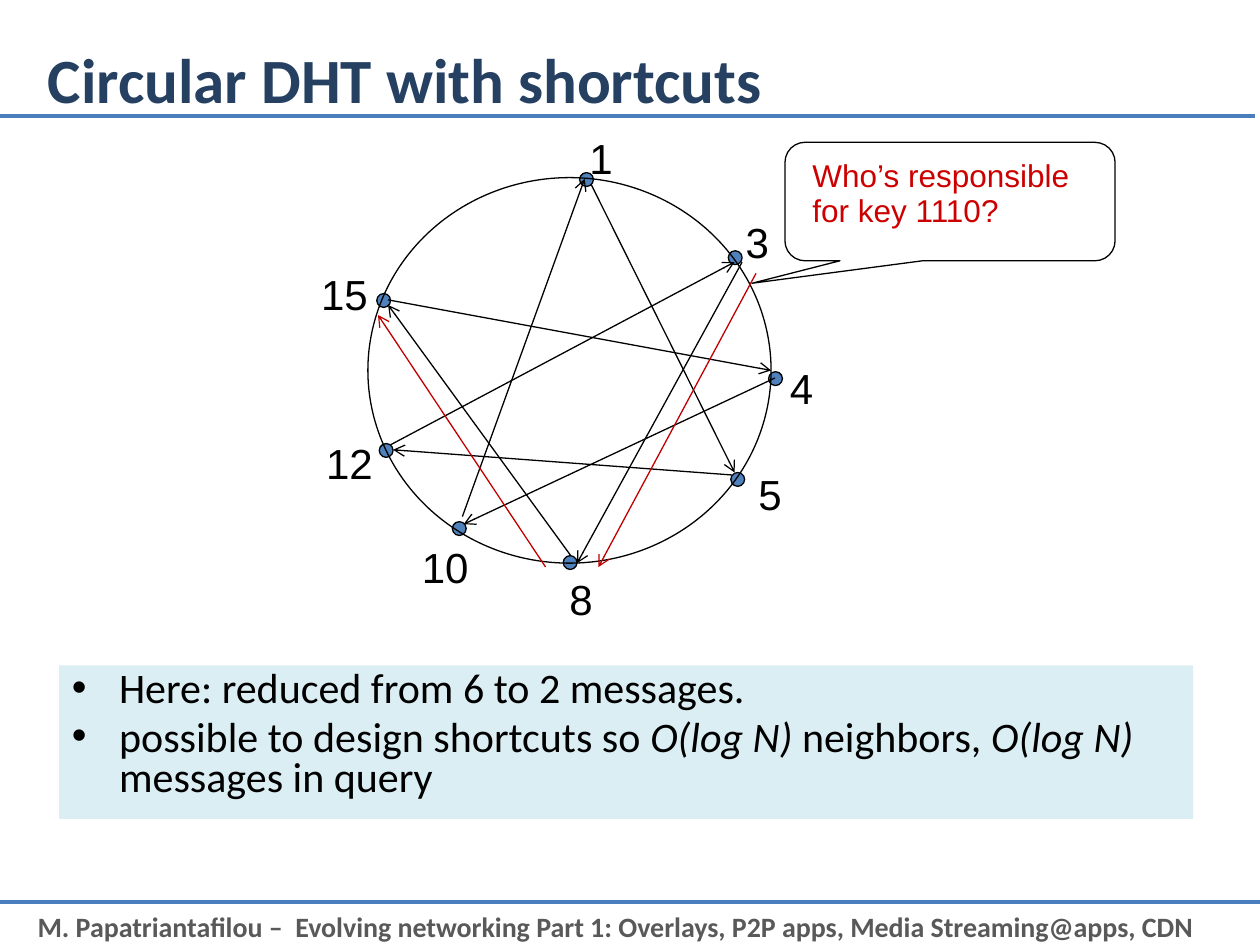
from lxml import etree
from pptx import Presentation
from pptx.dml.color import RGBColor
from pptx.enum import shapes, text
from pptx.oxml.ns import qn
from pptx.util import Inches, Pt

BLACK = RGBColor(0x00, 0x00, 0x00)
NAVY = RGBColor(0x25, 0x40, 0x61)
RULE_BLUE = RGBColor(0x4B, 0x7E, 0xBC)
PEER_BLUE = RGBColor(0x4F, 0x81, 0xBD)
PALE_BLUE = RGBColor(0xDB, 0xEE, 0xF4)
GREY = RGBColor(0x59, 0x59, 0x59)
QUERY_RED = RGBColor(0xC0, 0x00, 0x00)
QUESTION_RED = RGBColor(0xCC, 0x00, 0x00)

PEER_SIZE = 0.11
PEERS = [
    ("1", (1.68, -0.04), (1.66, -0.41)),
    ("3", (2.86, 0.58), (2.90, 0.26)),
    ("4", (3.18, 1.54), (3.25, 1.42)),
    ("5", (2.88, 2.34), (3.00, 2.26)),
    ("8", (1.55, 3.00), (1.50, 3.09)),
    ("10", (0.67, 2.73), (0.33, 2.84)),
    ("12", (0.09, 2.11), (-0.43, 2.01)),
    ("15", (0.07, 0.92), (-0.47, 0.67)),
]
SHORTCUTS = [
    ((3.23, 1.59), (0.76, 2.75)),
    ((2.89, 2.36), (0.20, 2.16)),
    ((1.61, 3.00), (0.16, 1.01)),
    ((0.75, 2.69), (1.72, 0.01)),
    ((0.18, 2.12), (2.91, 0.67)),
    ((0.16, 0.97), (3.20, 1.53)),
    ((1.77, 0.05), (2.91, 2.34)),
    ((2.97, 0.67), (1.66, 3.06)),
]
QUERY_HOPS = [
    ((3.08, 0.76), (1.83, 3.09)),
    ((1.41, 3.09), (0.08, 1.09)),
]
BULLETS = [
    [("Here: reduced from 6 to 2 messages.", False)],
    [
        ("possible to design shortcuts so ", False),
        ("O(log N) ", True),
        ("neighbors, ", False),
        ("O(log N) ", True),
        ("messages in query", False),
    ],
]


def place(shape, box):
    """Move and size a shape to a box in inches."""
    shape.left, shape.top, shape.width, shape.height = map(Inches, box)


def style(font, name, size, color, bold=False):
    """Set the look of a font."""
    font.name, font.size, font.bold = name, Pt(size), bold
    font.color.rgb = color


def add_line(page, start, end, color, width, arrow=False):
    """Draw a straight line, with an open arrowhead at its end if asked."""
    line = page.shapes.add_connector(
        shapes.MSO_CONNECTOR.STRAIGHT, *map(Inches, (*start, *end)))
    line.line.color.rgb = color
    line.line.width = Pt(width)
    if arrow:
        etree.SubElement(line.line._get_or_add_ln(), qn("a:tailEnd"), type="arrow")
    etree.SubElement(line._element.spPr, qn("a:effectLst"))


def add_outline(page, kind, box, fill=None):
    """Draw a thin black outlined shape, filled only if a colour is given."""
    shape = page.shapes.add_shape(kind, *map(Inches, box))
    shape.shadow.inherit = False
    shape.line.color.rgb = BLACK
    shape.line.width = Pt(0.75)
    if fill is None:
        shape.fill.background()
    else:
        shape.fill.solid()
        shape.fill.fore_color.rgb = fill
    return shape


def add_text(page, box, words, font, wrap=True, spacing=None):
    """Add a text box with one paragraph for each line of words."""
    frame = page.shapes.add_textbox(*map(Inches, box)).text_frame
    frame.word_wrap = wrap
    frame.text = words
    for para in frame.paragraphs:
        para.line_spacing = spacing
        for span in para.runs:
            style(span.font, *font)


def add_title(page, box):
    """Fill the title and draw the rule below it."""
    title = page.shapes.title
    place(title, box)
    frame = title.text_frame
    frame.text = "Circular DHT with shortcuts"
    frame.vertical_anchor = text.MSO_ANCHOR.MIDDLE
    frame.paragraphs[0].alignment = text.PP_ALIGN.LEFT
    style(frame.paragraphs[0].runs[0].font, "Calibri", 36, NAVY, True)
    left, rule_top = box[0] - 0.32, box[1] + 0.92
    add_line(page, (left, rule_top), (left + 10, rule_top), RULE_BLUE, 2.25)


def add_footer(page, box):
    """Draw the bottom rule and the course line under it."""
    left, top, width, height = box
    add_line(page, (left, top), (left + width, top), RULE_BLUE, 2.25)
    add_text(page, (left + 0.2, top + 0.01, width - 0.2, height),
             "M. Papatriantafilou –  Evolving networking Part 1: "
             "Overlays, P2P apps, Media Streaming@apps, CDN",
             ("Calibri", 16, GREY, True))


def add_bullets(page, box):
    """Fill the body placeholder with the conclusions."""
    body = page.placeholders[1]
    place(body, box)
    body.fill.solid()
    body.fill.fore_color.rgb = PALE_BLUE
    frame = body.text_frame
    frame.auto_size = text.MSO_AUTO_SIZE.NONE
    for index, pieces in enumerate(BULLETS):
        para = frame.add_paragraph() if index else frame.paragraphs[0]
        para.line_spacing = 0.8
        for words, italic in pieces:
            span = para.add_run()
            span.text = words
            style(span.font, "Calibri", 24, BLACK)
            span.font.italic = italic


def add_ring(page, box):
    """Draw the ring of peers, their shortcuts and the query hops."""
    left, top = box[:2]

    def shift(point):
        return left + point[0], top + point[1]

    oval = shapes.MSO_SHAPE.OVAL
    for name, dot, label in PEERS:
        add_outline(page, oval, (*shift(dot), PEER_SIZE, PEER_SIZE), PEER_BLUE)
        add_text(page, (*shift(label), 0.2 + 0.19 * len(name), 0.5), name,
                 ("Arial", 24, BLACK), wrap=False)
    add_outline(page, oval, box)
    for hops, color in ((SHORTCUTS, BLACK), (QUERY_HOPS, QUERY_RED)):
        for start, end in hops:
            add_line(page, shift(start), shift(end), color, 0.75, arrow=True)


def add_question(page, box):
    """Draw the callout with the question asked at peer 3."""
    left, top, width, height = box
    callout = add_outline(page, shapes.MSO_SHAPE.ROUNDED_RECTANGULAR_CALLOUT, box)
    for index, value in enumerate((-0.6, 0.69, 0.17)):
        callout.adjustments[index] = value
    add_text(page, (left + 0.12, top + 0.08, width - 0.02, height - 0.21),
             "Who’s responsible\nfor key 1110?",
             ("Arial", 18, QUESTION_RED), spacing=Pt(20))


def main():
    """Build the slide and save it."""
    deck = Presentation()
    deck.slide_width, deck.slide_height = Inches(10), Inches(7.5)
    page = deck.slides.add_slide(deck.slide_layouts[1])
    add_footer(page, (0, 7.16, 10, 0.37))
    add_title(page, (0.28, 0, 9, 1.25))
    add_bullets(page, (0.47, 5.28, 9, 1.22))
    add_ring(page, (2.92, 1.41, 3.2, 3.06))
    add_question(page, (6.23, 1.13, 2.62, 0.94))
    deck.save("out.pptx")


if __name__ == "__main__":
    main()
